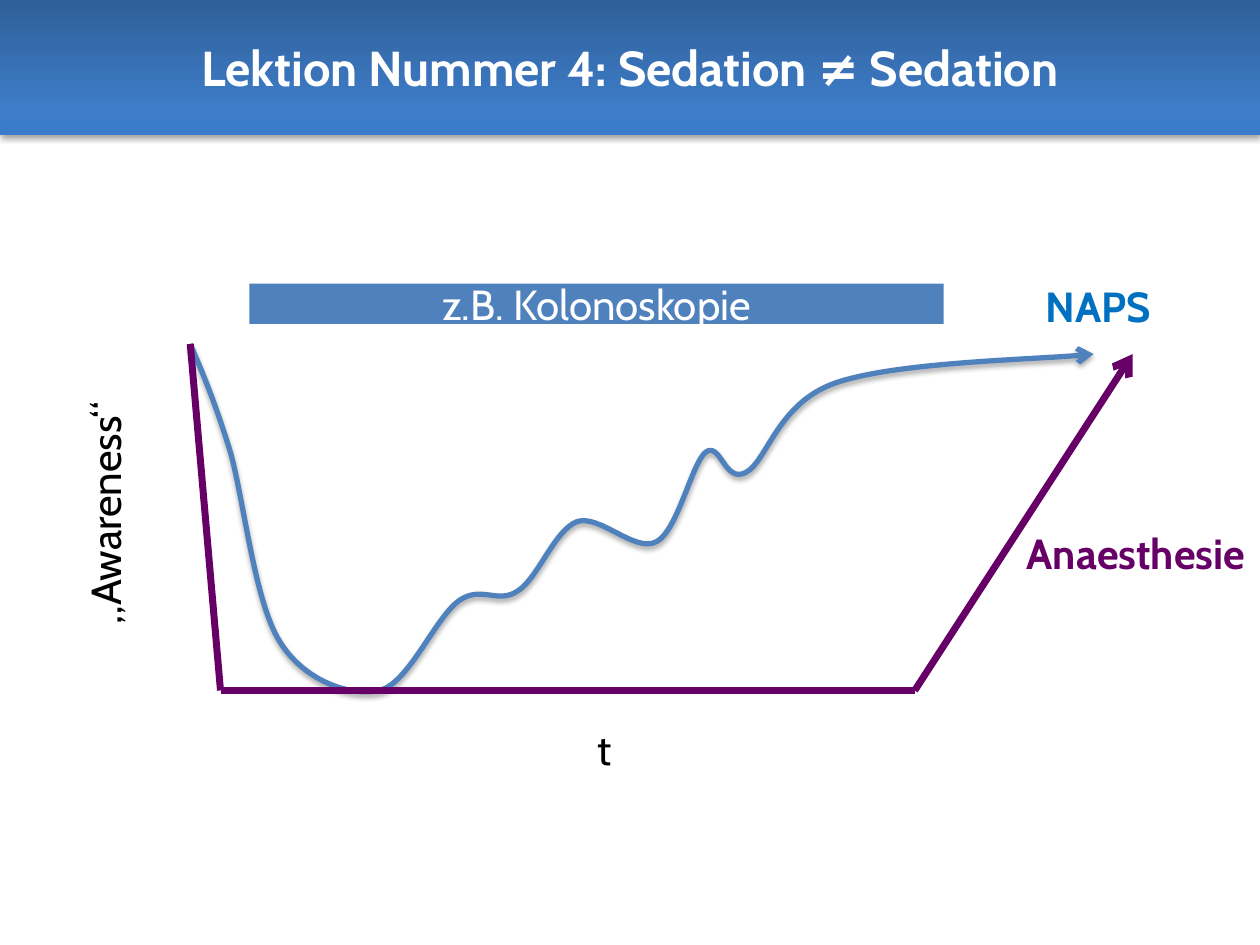
import copy

import pptx
import pptx.dml.color
import pptx.enum.shapes
import pptx.enum.text
import pptx.oxml
import pptx.oxml.ns
import pptx.util
from pptx.util import Inches

FONT = "Cabin"
COLORS = {
    "white": "FFFFFF",
    "black": "000000",
    "blue": "4F81BD",
    "label_blue": "0070C0",
    "purple": "660066",
}
HEADER_STOPS = [(0, "2F5F99"), (0.8, "3D7CC7"), (1, "3A7CCB")]
NAMESPACE = 'xmlns:a="http://schemas.openxmlformats.org/drawingml/2006/main"'
SHADOW = (
    '<a:outerShdw blurRad="39370" dist="22860" dir="5400000" rotWithShape="0">'
    '<a:srgbClr val="000000"><a:alpha val="35000"/></a:srgbClr></a:outerShdw>'
)

# Sedation curve: start point, then two control points and an end point per arc
CURVE_START = (1.51, 2.73)
CURVE_ARCS = [
    ((1.61, 2.96), (1.71, 3.2), (1.83, 3.59)),
    ((1.94, 3.99), (2.02, 4.77), (2.22, 5.09)),
    ((2.41, 5.4), (2.77, 5.53), (3.01, 5.48)),
    ((3.24, 5.43), (3.45, 4.91), (3.64, 4.77)),
    ((3.82, 4.64), (3.95, 4.8), (4.11, 4.69)),
    ((4.27, 4.59), (4.4, 4.21), (4.58, 4.14)),
    ((4.76, 4.08), (5.04, 4.39), (5.21, 4.3)),
    ((5.38, 4.21), (5.49, 3.68), (5.6, 3.59)),
    ((5.72, 3.5), (5.75, 3.84), (5.92, 3.75)),
    ((6.09, 3.66), (6.17, 3.2), (6.63, 3.04)),
    ((7.09, 2.88), (8.34, 2.85), (8.68, 2.81)),
]
ANAESTHESIA_POINTS = [(1.51, 2.73), (1.75, 5.48), (7.26, 5.48), (8.99, 2.81)]


def rgb(value):
    return pptx.dml.color.RGBColor.from_string(value)


def xml(content):
    """Parse a DrawingML element written without its namespace."""
    head, mark, rest = content.partition(" ")
    return pptx.oxml.parse_xml(f"{head} {NAMESPACE}{mark}{rest}")


def set_effects(shape, shadow=False):
    """Replace the theme effects by a soft shadow or by nothing."""
    properties = shape._element.spPr
    for old in properties.findall(pptx.oxml.ns.qn("a:effectLst")):
        properties.remove(old)
    properties.append(xml(f"<a:effectLst >{SHADOW if shadow else ''}</a:effectLst>"))


def set_line(shape, color, width, arrow=False):
    shape.line.color.rgb = rgb(color)
    shape.line.width = pptx.util.Pt(width)
    if arrow:
        shape.line._get_or_add_ln().append(xml('<a:tailEnd type="arrow"/>'))


def write_text(shape, text, size=24, color=COLORS["black"], bold=False,
               centred=False, wrap=False):
    frame = shape.text_frame
    frame.word_wrap = wrap
    para = frame.paragraphs[0]
    align = pptx.enum.text.PP_ALIGN
    para.alignment = align.CENTER if centred else align.LEFT
    span = para.add_run()
    span.text = text
    span.font.name = FONT
    span.font.size = pptx.util.Pt(size)
    span.font.bold = bold
    span.font.color.rgb = rgb(color)


def add_label(page, text, left, top, width, height, rotation=0, **text_format):
    box = page.shapes.add_textbox(*map(Inches, (left, top, width, height)))
    box.rotation = rotation
    write_text(box, text, **text_format)
    box.text_frame.auto_size = pptx.enum.text.MSO_AUTO_SIZE.SHAPE_TO_FIT_TEXT


def add_bar(page, text, left, top, width, height, shadow=False, **text_format):
    bar = page.shapes.add_shape(pptx.enum.shapes.MSO_SHAPE.RECTANGLE,
                                *map(Inches, (left, top, width, height)))
    bar.fill.solid()
    bar.fill.fore_color.rgb = rgb(COLORS["blue"])
    bar.line.fill.background()
    set_effects(bar, shadow)
    write_text(bar, text, color=COLORS["white"], centred=True, **text_format)
    bar.text_frame.vertical_anchor = pptx.enum.text.MSO_ANCHOR.MIDDLE
    return bar


def fill_gradient(shape, stops):
    """Fill from top to bottom with any number of stops."""
    shape.fill.gradient()
    shape.fill.gradient_angle = 270
    stop_list = shape._element.spPr.find(".//" + pptx.oxml.ns.qn("a:gsLst"))
    while len(stop_list) < len(stops):
        stop_list.append(copy.deepcopy(stop_list[-1]))
    for stop, (position, color) in zip(shape.fill.gradient_stops, stops):
        stop.position = position
        stop.color.rgb = rgb(color)


def add_curve(page, start, arcs, color, width):
    """Draw the end points as a freeform, then bend its segments."""
    builder = page.shapes.build_freeform(*map(Inches, start))
    ends = [tuple(map(Inches, arc[-1])) for arc in arcs]
    builder.add_line_segments(ends, close=False)
    curve = builder.convert_to_shape()
    segments = list(curve._element.iter(pptx.oxml.ns.qn("a:lnTo")))
    for segment, arc in zip(segments, arcs):
        points = "".join(
            f'<a:pt x="{Inches(x) - curve.left}" y="{Inches(y) - curve.top}"/>'
            for x, y in arc)
        bend = xml(f"<a:cubicBezTo >{points}</a:cubicBezTo>")
        segment.getparent().replace(segment, bend)
    curve.fill.background()
    set_line(curve, color, width, arrow=True)
    set_effects(curve, shadow=True)


def add_segment(page, start, end, color, width, arrow=False):
    segment = page.shapes.add_connector(pptx.enum.shapes.MSO_CONNECTOR.STRAIGHT,
                                        *map(Inches, start + end))
    set_line(segment, color, width, arrow)
    set_effects(segment)


def main():
    deck = pptx.Presentation()
    deck.slide_width, deck.slide_height = Inches(10), Inches(7.5)
    page = deck.slides.add_slide(deck.slide_layouts[6])

    # Header
    header = add_bar(page, "Lektion Nummer 4: Sedation ≠ Sedation",
                     0, 0, 10, 1.07, shadow=True, size=28, bold=True)
    fill_gradient(header, HEADER_STOPS)

    # Axis names
    add_label(page, "t", 4.64, 5.69, 0.32, 0.5)
    add_label(page, "„Awareness“", -0.15, 3.81, 1.98, 0.51, rotation=270)

    # Courses of awareness
    add_curve(page, CURVE_START, CURVE_ARCS, COLORS["blue"], 3)
    pairs = list(zip(ANAESTHESIA_POINTS, ANAESTHESIA_POINTS[1:]))
    for start, end in pairs:
        add_segment(page, start, end, COLORS["purple"], 4,
                    arrow=end == ANAESTHESIA_POINTS[-1])

    # Course names
    add_label(page, "NAPS", 8.2, 2.18, 1.21, 0.5,
              color=COLORS["label_blue"], bold=True, wrap=True)
    add_label(page, "Anaesthesie", 8.05, 4.14, 2.07, 0.5,
              color=COLORS["purple"], bold=True, wrap=True)

    # Duration of the procedure
    add_bar(page, "z.B. Kolonoskopie", 1.98, 2.25, 5.51, 0.32)

    deck.save("out.pptx")


if __name__ == "__main__":
    main()
